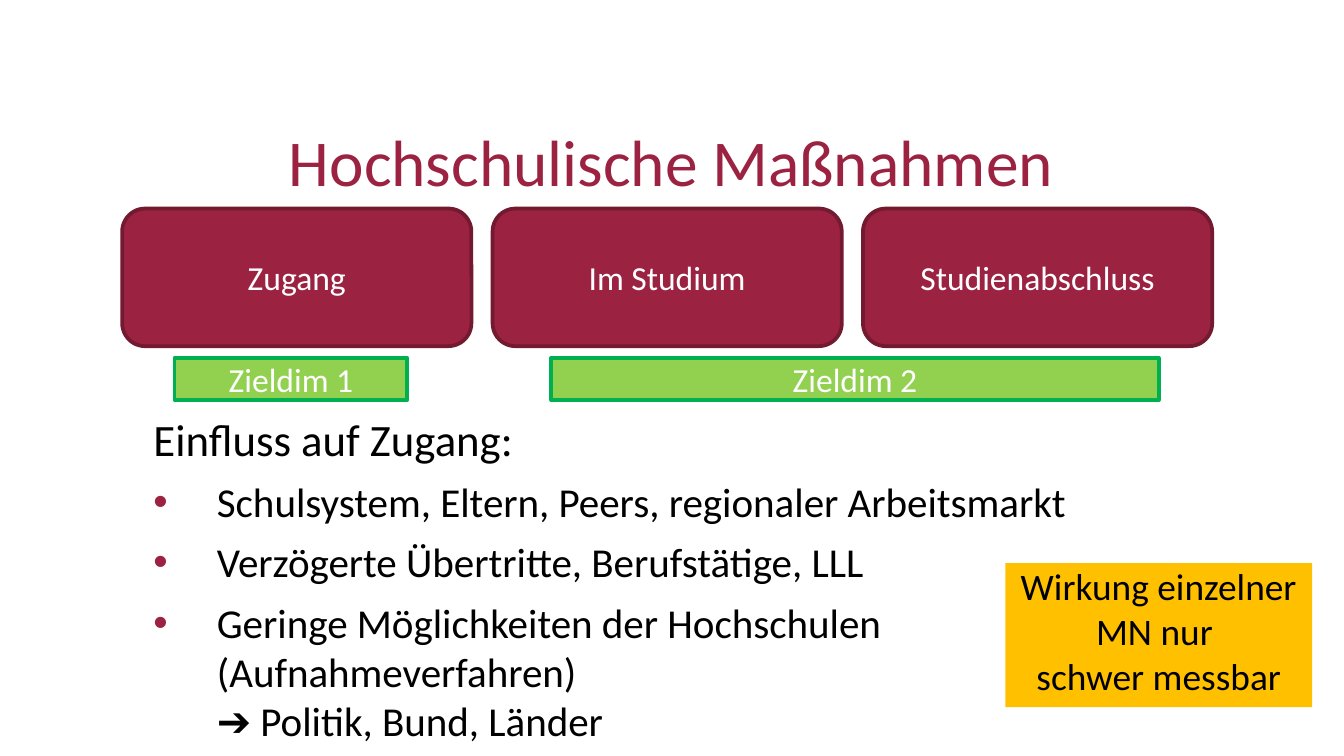
from lxml.etree import SubElement
from pptx import Presentation
from pptx.dml.color import RGBColor
from pptx.enum.shapes import MSO_SHAPE as Shape
from pptx.enum.text import MSO_ANCHOR as Anchor, PP_ALIGN as Align
from pptx.oxml.ns import qn
from pptx.util import Cm, Pt

BERRY = "9B2341"
BLACK = "000000"
WHITE = "FFFFFF"


def color(value):
    return RGBColor.from_string(value)


def write(shape, lines, sizes, ink, align, anchor=Anchor.TOP, inset=0, gap=0):
    frame = shape.text_frame
    frame.word_wrap = True
    frame.vertical_anchor = anchor
    frame.margin_left = frame.margin_right = Cm(inset)
    frame.margin_top = frame.margin_bottom = Cm(inset / 2)
    for index, (line, size) in enumerate(zip(lines, sizes)):
        paragraph = frame.add_paragraph() if index else frame.paragraphs[0]
        paragraph.text = line
        paragraph.alignment = align
        paragraph.space_before = Pt(gap if index else 0)
        paragraph.space_after = Pt(gap)
        for run in paragraph.runs:
            run.font.name = "Calibri"
            run.font.size = Pt(size)
            run.font.color.rgb = color(ink)


presentation = Presentation()
presentation.slide_width = Cm(25.4)
presentation.slide_height = Cm(14.28)
slide = presentation.slides.add_slide(presentation.slide_layouts[6])
shapes = slide.shapes

title = shapes.add_textbox(Cm(2.49), Cm(2.28), Cm(20.4), Cm(1.88))
write(title, ["Hochschulische Maßnahmen"], [35], BERRY, Align.CENTER)

body = shapes.add_textbox(Cm(2.9), Cm(7.77), Cm(19.6), Cm(5.8))
influences = [
    "Einfluss auf Zugang:",
    "Schulsystem, Eltern, Peers, regionaler Arbeitsmarkt",
    "Verzögerte Übertritte, Berufstätige, LLL",
    "Geringe Möglichkeiten der Hochschulen\v(Aufnahmeverfahren)\v➔ Politik, Bund, Länder",
]
write(body, influences, [24, 22, 22, 22], BLACK, Align.LEFT, gap=3)
for paragraph in body.text_frame.paragraphs[1:]:
    properties = paragraph._p.get_or_add_pPr()
    properties.set("marL", str(Cm(1.2)))
    properties.set("indent", str(-Cm(1.2)))
    bullet_color = SubElement(properties, qn("a:buClr"))
    SubElement(bullet_color, qn("a:srgbClr"), val=BERRY)
    SubElement(properties, qn("a:buFont"), typeface="Arial")
    SubElement(properties, qn("a:buChar"), char="•")

phases = ["Zugang", "Im Studium", "Studienabschluss"]
boxes = [
    (Shape.ROUNDED_RECTANGLE, 2.31 + 7 * index, 3.94, 6.6, 2.6, BERRY, "731A30", phase)
    for index, phase in enumerate(phases)
]
boxes += [
    (Shape.RECTANGLE, 3.3, 6.76, 4.4, 0.8, "92D050", "00B050", "Zieldim 1"),
    (Shape.RECTANGLE, 10.42, 6.76, 11.48, 0.8, "92D050", "00B050", "Zieldim 2"),
]
for kind, left, top, width, height, fill, outline, label in boxes:
    box = shapes.add_shape(kind, Cm(left), Cm(top), Cm(width), Cm(height))
    box.shadow.inherit = False
    box.fill.solid()
    box.fill.fore_color.rgb = color(fill)
    box.line.color.rgb = color(outline)
    box.line.width = Pt(2)
    write(box, [label], [18], WHITE, Align.CENTER, Anchor.MIDDLE, inset=0.25)

note = shapes.add_shape(Shape.RECTANGLE, Cm(19), Cm(10.64), Cm(5.8), Cm(2.72))
note.shadow.inherit = False
note.fill.solid()
note.fill.fore_color.rgb = color("FFC000")
note.line.fill.background()
write(note, ["Wirkung einzelner MN nur \vschwer messbar"], [20], BLACK, Align.CENTER, gap=3)

presentation.save("out.pptx")
